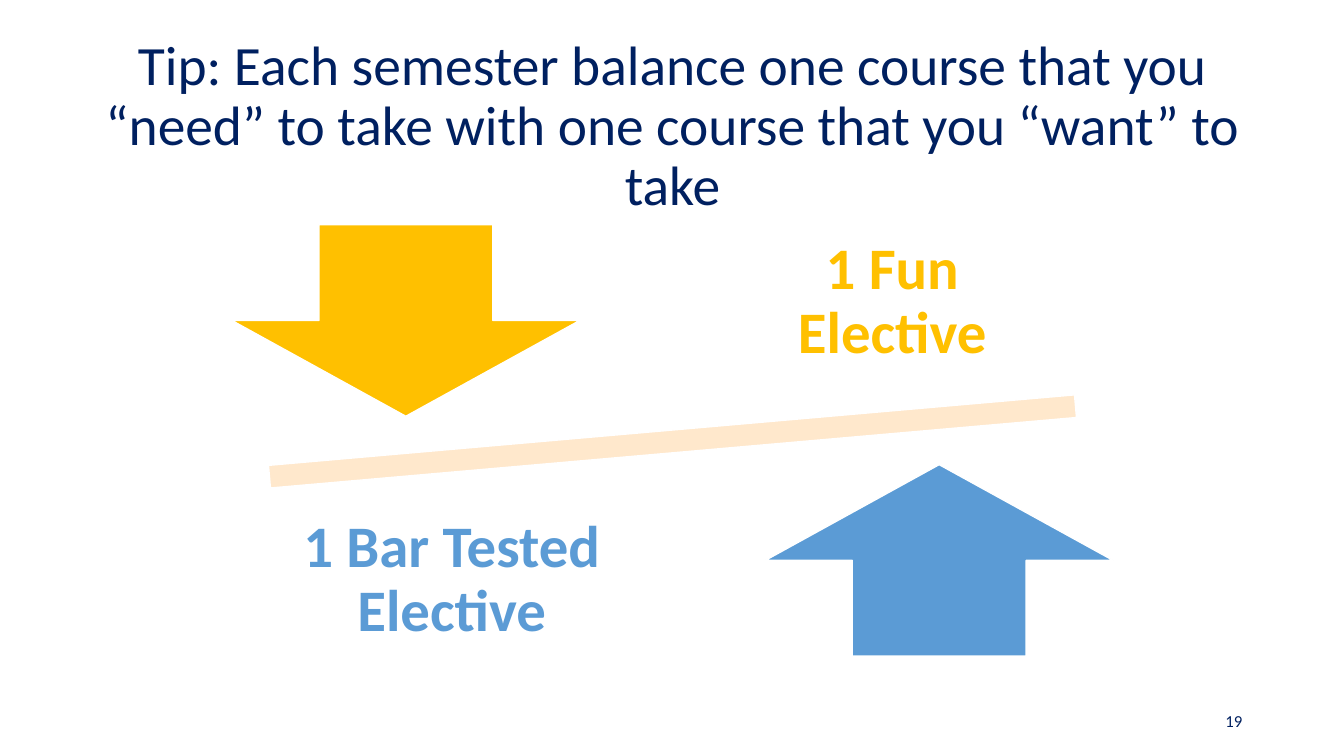
from pptx import Presentation
from pptx.dml.color import RGBColor
from pptx.enum.shapes import MSO_SHAPE
from pptx.enum.text import MSO_ANCHOR, PP_ALIGN
from pptx.util import Inches, Pt

NAVY = RGBColor(0x00, 0x20, 0x60)
GOLD = RGBColor(0xFF, 0xC0, 0x00)
BLUE = RGBColor(0x5B, 0x9B, 0xD5)
CREAM = RGBColor(0xFF, 0xE8, 0xCC)
WHITE = RGBColor(0xFF, 0xFF, 0xFF)

BEAM = MSO_SHAPE.MATH_MINUS
DOWN_ARROW = MSO_SHAPE.DOWN_ARROW
UP_ARROW = MSO_SHAPE.UP_ARROW
MIDDLE = MSO_ANCHOR.MIDDLE
CENTER = PP_ALIGN.CENTER
RIGHT = PP_ALIGN.RIGHT

FONT = "Calibri"
ARROW_SIZE = (3.45, 1.9)
LABEL_SIZE = (3.68, 2)
LABEL_INSET = Inches(0.33)


def add_text(slide, box, text, size, color, align=CENTER, bold=False, spacing=0.9):
    """Add a one-paragraph text box and return its text frame."""
    frame = slide.shapes.add_textbox(*map(Inches, box)).text_frame
    frame.word_wrap = True
    frame.vertical_anchor = MIDDLE
    paragraph = frame.paragraphs[0]
    paragraph.alignment = align
    paragraph.line_spacing = spacing
    run = paragraph.add_run()
    run.text = text
    run.font.name = FONT
    run.font.size = Pt(size)
    run.font.bold = bold
    run.font.color.rgb = color
    return frame


def add_label(slide, left, top, text, color):
    """Add a bold elective label with wide insets."""
    frame = add_text(slide, (left, top, *LABEL_SIZE), text, 42, color, bold=True)
    frame.margin_left = frame.margin_right = LABEL_INSET
    frame.margin_top = frame.margin_bottom = LABEL_INSET


def add_figure(slide, preset, box, color, rotation=0):
    """Add a filled preset shape with a thin white outline."""
    figure = slide.shapes.add_shape(preset, *map(Inches, box))
    figure.shadow.inherit = False
    figure.rotation = rotation
    figure.fill.solid()
    figure.fill.fore_color.rgb = color
    figure.line.color.rgb = WHITE
    figure.line.width = Pt(1)


def main():
    prs = Presentation()
    prs.slide_width = Inches(13.33)
    prs.slide_height = Inches(7.5)
    slide = prs.slides.add_slide(prs.slide_layouts[6])

    # Title
    add_text(slide, (0.92, 0.4, 11.5, 1.73),
             "Tip: Each semester balance one course that you “need” to take "
             "with one course that you “want” to take", 39.6, NAVY)

    # Tilted balance beam
    add_figure(slide, BEAM, (1.21, 3.9, 10.92, 0.96), CREAM, rotation=355)

    # Fun elective
    add_figure(slide, DOWN_ARROW, (2.3, 2.23, *ARROW_SIZE), GOLD)
    add_label(slide, 7.01, 2, "1 Fun Elective", GOLD)

    # Bar tested elective
    add_figure(slide, UP_ARROW, (7.59, 4.61, *ARROW_SIZE), BLUE)
    add_label(slide, 2.64, 4.76, "1 Bar Tested Elective", BLUE)

    # Page number
    add_text(slide, (9.42, 6.95, 3, 0.4), "19", 12, NAVY, align=RIGHT, spacing=1.0)

    prs.save("out.pptx")


if __name__ == "__main__":
    main()
